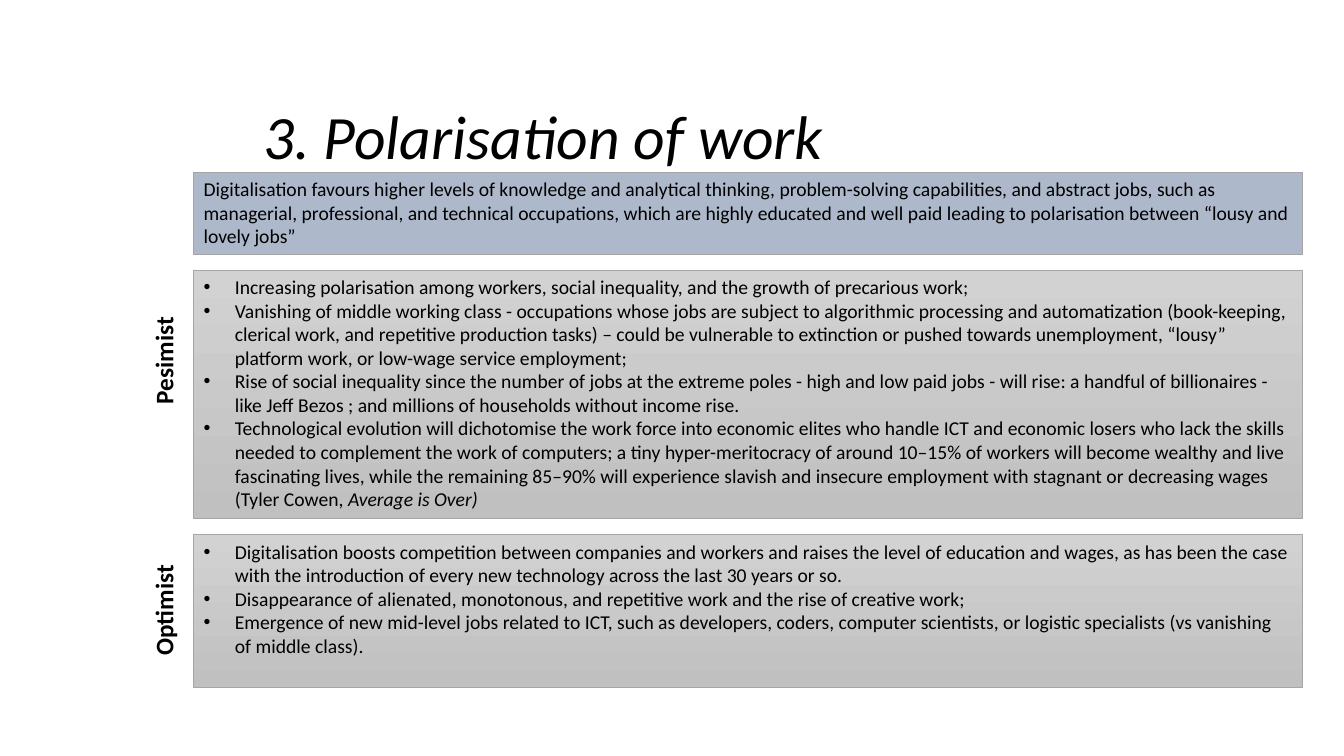
from lxml.etree import SubElement
from pptx import Presentation
from pptx.dml.color import RGBColor
from pptx.enum.shapes import MSO_SHAPE
from pptx.enum.text import MSO_ANCHOR, PP_ALIGN
from pptx.oxml.ns import qn
from pptx.util import Cm, Pt

TITLE = "3. Polarisation of work"
# Each paragraph is a list of (text, italic) spans.
INTRO = [
    [("Digitalisation favours higher levels of knowledge and analytical thinking, problem-solving "
      "capabilities, and abstract jobs, such as managerial, professional, and technical occupations, "
      "which are highly educated and well paid leading to polarisation between “lousy and lovely jobs”", False)],
]
PESSIMIST = [
    [("Increasing polarisation among workers, social inequality, and the growth of precarious work;", False)],
    [("Vanishing of middle working class - occupations whose jobs are subject to algorithmic processing "
      "and automatization (book-keeping, clerical work, and repetitive production tasks) – could be "
      "vulnerable to extinction or pushed towards unemployment, “lousy” platform work, or low-wage "
      "service employment;", False)],
    [("Rise of social inequality since the number of jobs at the extreme poles - high and low paid jobs - "
      "will rise: a handful of billionaires - like Jeff Bezos ; and millions of households without "
      "income rise.", False)],
    [("Technological evolution will dichotomise the work force into economic elites who handle ICT and "
      "economic losers who lack the skills needed to complement the work of computers; a tiny "
      "hyper-meritocracy of around 10–15% of workers will become wealthy and live fascinating lives, "
      "while the remaining 85–90% will experience slavish and insecure employment with stagnant or "
      "decreasing wages (Tyler Cowen, ", False), ("Average is Over)", True)],
]
OPTIMIST = [
    [("Digitalisation boosts competition between companies and workers and raises the level of education "
      "and wages, as has been the case with the introduction of every new technology across the last "
      "30 years or so.", False)],
    [("Disappearance of alienated, monotonous, and repetitive work and the rise of creative work;", False)],
    [("Emergence of new mid-level jobs related to ICT, such as developers, coders, computer scientists, "
      "or logistic specialists (vs vanishing of middle class).", False)],
]
# label, label offset from panel top, panel height (cm), paragraphs
PANELS = [
    (None, 0, 2.06, INTRO),
    ("Pesimist", 0.33, 6.25, PESSIMIST),
    ("Optimist", 0, 3.84, OPTIMIST),
]
COLOURS = {"text": "000000", "intro": "ADB9CA", "light": "D2D2D2", "dark": "C0C0C0", "border": "A5A5A5"}
FORMATS = {
    "title": {"size": Pt(44), "italic": True},
    "label": {"size": Pt(18), "bold": True},
    "body": {"size": Pt(14)},
}
PANEL_LEFT, PANEL_TOP, PANEL_WIDTH, PANEL_GAP = 4.88, 4.34, 27.94, 0.41
LABEL_WIDTH, LABEL_HEIGHT = 1.27, 3.3
BULLET_INDENT = Cm(0.79)


def colour(name):
    return RGBColor.from_string(COLOURS[name])


def add_span(para, text, style, **extra):
    span = para.add_run()
    span.text = text
    span.font.name = "Calibri"
    span.font.color.rgb = colour("text")
    for name, value in {**FORMATS[style], **extra}.items():
        setattr(span.font, name, value)


def add_bullet(para):
    properties = para._p.get_or_add_pPr()
    properties.set("marL", str(BULLET_INDENT))
    properties.set("indent", str(-BULLET_INDENT))
    SubElement(properties, qn("a:buFont"), typeface="Arial")
    SubElement(properties, qn("a:buChar"), char="•")


def add_text_box(page, left, top, width, height, text, style):
    box = page.shapes.add_textbox(Cm(left), Cm(top), Cm(width), Cm(height))
    box.text_frame.word_wrap = True
    add_span(box.text_frame.paragraphs[0], text, style)
    return box.text_frame


def add_panel(page, top, height, paragraphs, bulleted):
    """Draw a bulleted panel in a grey gradient, or a plain one in solid blue."""
    panel = page.shapes.add_shape(
        MSO_SHAPE.RECTANGLE, Cm(PANEL_LEFT), Cm(top), Cm(PANEL_WIDTH), Cm(height))
    panel.shadow.inherit = False
    panel.line.color.rgb = colour("border")
    panel.line.width = Pt(0.5)
    if bulleted:
        panel.fill.gradient()
        panel.fill.gradient_angle = 270
        for stop, name in zip(panel.fill.gradient_stops, ("light", "dark")):
            stop.color.rgb = colour(name)
    else:
        panel.fill.solid()
        panel.fill.fore_color.rgb = colour("intro")
    frame = panel.text_frame
    frame.word_wrap = True
    frame.vertical_anchor = MSO_ANCHOR.TOP
    for index, spans in enumerate(paragraphs):
        para = frame.add_paragraph() if index else frame.paragraphs[0]
        para.alignment = PP_ALIGN.LEFT
        if bulleted:
            add_bullet(para)
        for text, italic in spans:
            add_span(para, text, "body", italic=italic)


def main():
    deck = Presentation()
    deck.slide_width, deck.slide_height = Cm(33.87), Cm(19.05)
    page = deck.slides.add_slide(deck.slide_layouts[6])

    title = add_text_box(page, 6.38, 1.73, 25.6, 3.56, TITLE, "title")
    title.vertical_anchor = MSO_ANCHOR.MIDDLE
    title.paragraphs[0].line_spacing = 0.9

    top = PANEL_TOP
    for label, offset, height, paragraphs in PANELS:
        add_panel(page, top, height, paragraphs, bulleted=label is not None)
        if label:
            frame = add_text_box(page, PANEL_LEFT - LABEL_WIDTH, top + offset,
                                 LABEL_WIDTH, LABEL_HEIGHT, label, "label")
            frame._txBody.bodyPr.set("vert", "vert270")
        top += height + PANEL_GAP

    deck.save("out.pptx")


if __name__ == "__main__":
    main()
